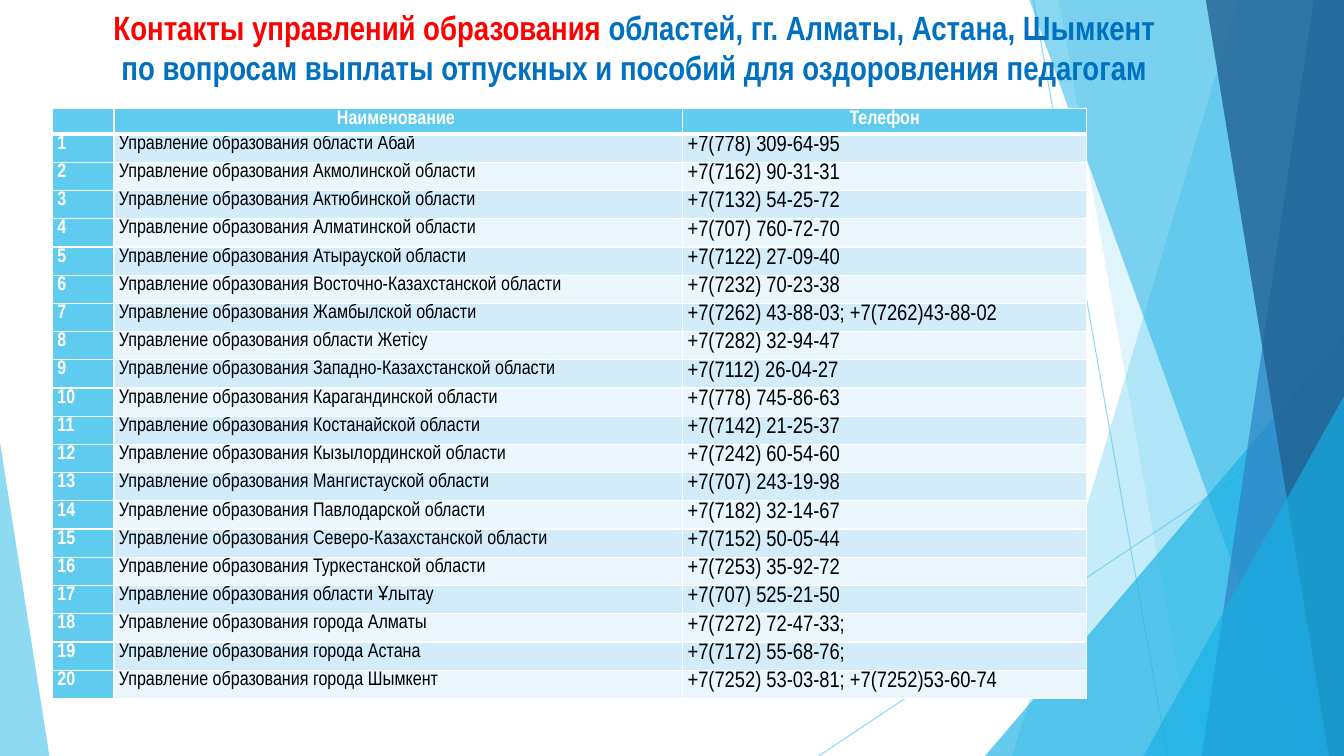
import pptx
import pptx.dml.color
import pptx.enum.shapes
import pptx.enum.text
import pptx.oxml
import pptx.oxml.ns
import pptx.util

PX = 9144  # 100 px to the inch
WIDTH, HEIGHT = 1333, 750
FONT = "Arial Narrow"
SKY, AZURE, BLUE, NAVY = "5FCBEF", "17B0E4", "2E83C3", "226292"
WHITE, BLACK, RED, TITLE_BLUE = "FFFFFF", "000000", "FF0000", "0070C0"
BANDS = ("D2ECF9", "EAF6FC")

COLUMN_WIDTHS = (61, 564, 401)
HEADER_HEIGHT, ROW_HEIGHT = 25, 28
OFFICE_PREFIX = "Управление образования "
CONTACTS = [
    ("области Абай", "+7(778) 309-64-95"),
    ("Акмолинской области", "+7(7162) 90-31-31"),
    ("Актюбинской области", "+7(7132) 54-25-72"),
    ("Алматинской области", "+7(707) 760-72-70"),
    ("Атырауской области", "+7(7122) 27-09-40"),
    ("Восточно-Казахстанской области", "+7(7232) 70-23-38"),
    ("Жамбылской области", "+7(7262) 43-88-03; +7(7262)43-88-02"),
    ("области Жетісу", "+7(7282) 32-94-47"),
    ("Западно-Казахстанской области", "+7(7112) 26-04-27"),
    ("Карагандинской области", "+7(778) 745-86-63"),
    ("Костанайской области", "+7(7142) 21-25-37"),
    ("Кызылординской области", "+7(7242) 60-54-60"),
    ("Мангистауской области", "+7(707) 243-19-98"),
    ("Павлодарской области", "+7(7182) 32-14-67"),
    ("Северо-Казахстанской области", "+7(7152) 50-05-44"),
    ("Туркестанской области", "+7(7253) 35-92-72"),
    ("области Ұлытау", "+7(707) 525-21-50"),
    ("города Алматы", "+7(7272) 72-47-33;"),
    ("города Астана", "+7(7172) 55-68-76;"),
    ("города Шымкент", "+7(7252) 53-03-81; +7(7252)53-60-74"),
]


def px(*lengths):
    return [pptx.util.Emu(length * PX) for length in lengths]


def rgb(hex_color):
    return pptx.dml.color.RGBColor.from_string(hex_color)


def set_opacity(shape, percent):
    for color in shape._element.spPr.iter(pptx.oxml.ns.qn("a:srgbClr")):
        color.append(pptx.oxml.parse_xml(
            f'<a:alpha {pptx.oxml.ns.nsdecls("a")} val="{percent * 1000}"/>'))


def paint(shape, color, opacity):
    shape.shadow.inherit = False
    shape.fill.solid()
    shape.fill.fore_color.rgb = rgb(color)
    shape.line.fill.background()
    set_opacity(shape, opacity)


def add_ray(slide, start, end):
    ray = slide.shapes.add_connector(
        pptx.enum.shapes.MSO_CONNECTOR.STRAIGHT, *px(*start, *end))
    ray.line.color.rgb = rgb(SKY)
    ray.line.width = pptx.util.Pt(0.75)
    set_opacity(ray, 70)
    ray._element.spPr.append(pptx.oxml.parse_xml(
        f'<a:effectLst {pptx.oxml.ns.nsdecls("a")}/>'))


def add_facet(slide, top_x, bottom_x, color, opacity):
    """Slanted left edge, filled out to the right side of the slide."""
    outline = slide.shapes.build_freeform(top_x, 0, scale=PX)
    outline.add_line_segments(
        [(WIDTH, 0), (WIDTH, HEIGHT), (bottom_x, HEIGHT)], close=True)
    paint(outline.convert_to_shape(), color, opacity)


def add_wedge(slide, left, top, width, apex, color, opacity):
    """Triangle standing on the bottom edge of the slide."""
    wedge = slide.shapes.add_shape(
        pptx.enum.shapes.MSO_SHAPE.ISOSCELES_TRIANGLE,
        *px(left, top, width, HEIGHT - top))
    wedge.adjustments[0] = apex
    paint(wedge, color, opacity)


def add_run(paragraph, text, size, color, bold):
    run = paragraph.add_run()
    run.text = text
    run.font.name = FONT
    run.font.size = pptx.util.Pt(size)
    run.font.bold = bold
    run.font.color.rgb = rgb(color)


def add_title(slide):
    title = slide.shapes.add_textbox(*px(20, 2, 1218, 144)).text_frame
    title.word_wrap = True
    title.margin_top = px(5)[0]
    heading = title.paragraphs[0]
    heading.alignment = pptx.enum.text.PP_ALIGN.CENTER
    add_run(heading, "Контакты управлений образования ", 24, RED, True)
    add_run(heading, "областей, гг. Алматы, Астана, Шымкент", 24, TITLE_BLUE, True)
    heading.add_line_break()
    add_run(heading, "по вопросам выплаты отпускных и пособий для оздоровления педагогам",
            24, TITLE_BLUE, True)


def set_borders(cell, bottom_width):
    properties = cell._tc.get_or_add_tcPr()
    for side, points in (("L", 1), ("R", 1), ("T", 1), ("B", bottom_width)):
        properties.append(pptx.oxml.parse_xml(
            f'<a:ln{side} {pptx.oxml.ns.nsdecls("a")} w="{points * 12700}">'
            f'<a:solidFill><a:srgbClr val="{WHITE}"/></a:solidFill></a:ln{side}>'))


def fill_cell(cell, text, background, size=14, color=WHITE, bold=True, header=False):
    set_borders(cell, 3 if header else 1)
    cell.fill.solid()
    cell.fill.fore_color.rgb = rgb(background)
    cell.margin_left, cell.margin_right, cell.margin_top, cell.margin_bottom = px(5, 5, 0, 0)
    paragraph = cell.text_frame.paragraphs[0]
    paragraph.line_spacing = 1.05
    if header:
        paragraph.alignment = pptx.enum.text.PP_ALIGN.CENTER
    if text:
        add_run(paragraph, text, size, color, bold)
    else:
        # An empty cell still needs a text size to keep its row low
        paragraph._p.get_or_add_endParaRPr().set("sz", str(size * 100))


def add_contacts(slide):
    height = HEADER_HEIGHT + ROW_HEIGHT * len(CONTACTS)
    contacts = slide.shapes.add_table(
        len(CONTACTS) + 1, len(COLUMN_WIDTHS),
        *px(52, 108, sum(COLUMN_WIDTHS), height)).table
    for column, width in zip(contacts.columns, px(*COLUMN_WIDTHS)):
        column.width = width
    for row in contacts.rows:
        row.height = px(ROW_HEIGHT)[0]
    contacts.rows[0].height = px(HEADER_HEIGHT)[0]

    for column, label in enumerate(("", "Наименование ", "Телефон")):
        fill_cell(contacts.cell(0, column), label, SKY, header=True)
    for number, (region, phone) in enumerate(CONTACTS, start=1):
        band = BANDS[(number - 1) % 2]
        fill_cell(contacts.cell(number, 0), str(number), SKY)
        fill_cell(contacts.cell(number, 1), OFFICE_PREFIX + region, band, 14, BLACK, False)
        fill_cell(contacts.cell(number, 2), phone, band, 16, BLACK, False)


def main():
    presentation = pptx.Presentation()
    presentation.slide_width, presentation.slide_height = px(WIDTH, HEIGHT)
    slide = presentation.slides.add_slide(presentation.slide_layouts[6])

    # Faceted backdrop, back to front
    add_ray(slide, (1025, 0), (1158, HEIGHT))
    add_ray(slide, (WIDTH, 403), (812, HEIGHT))
    add_facet(slide, 1228, 1004, SKY, 36)
    add_facet(slide, 1050, 1183, SKY, 20)
    add_wedge(slide, 977, 333, 356, 1, AZURE, 66)
    add_facet(slide, 1021, 1291, AZURE, 50)
    add_facet(slide, 1303, 1192, BLUE, 70)
    add_facet(slide, 1196, 1318, NAVY, 80)
    add_wedge(slide, 1134, 393, 199, 1, AZURE, 66)
    add_wedge(slide, 0, 439, 49, 0, SKY, 70)

    # Heading and contact list
    add_title(slide)
    add_contacts(slide)
    presentation.save("out.pptx")


if __name__ == "__main__":
    main()
